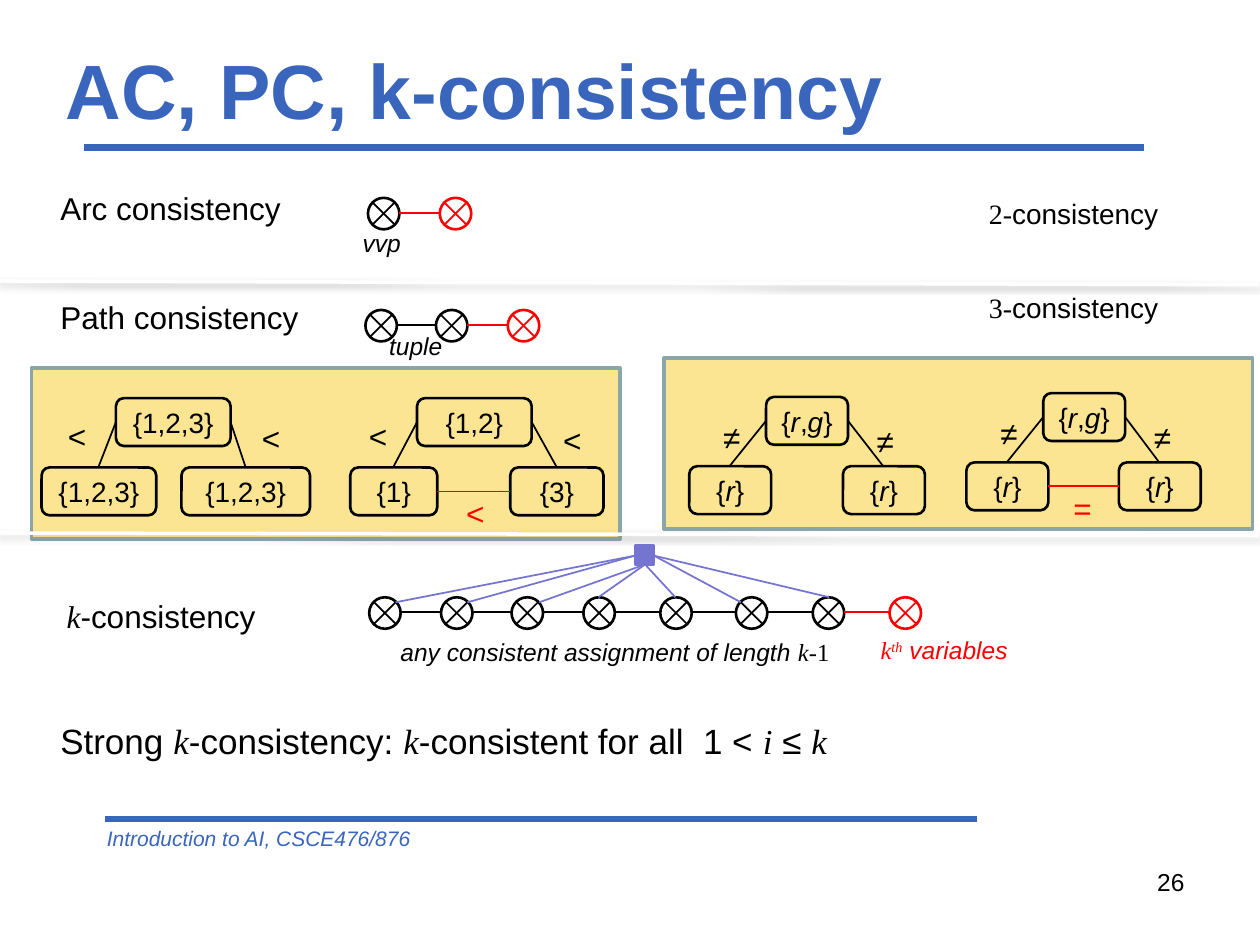
from dataclasses import dataclass
from itertools import pairwise

from lxml.etree import SubElement
from pptx import Presentation
from pptx.dml.color import RGBColor
from pptx.enum.shapes import MSO_CONNECTOR, MSO_SHAPE
from pptx.enum.text import MSO_ANCHOR, MSO_AUTO_SIZE, PP_ALIGN
from pptx.oxml.ns import qn
from pptx.util import Emu, Pt

EMU_PER_PX = 9144  # 100 px to the inch
COLORS = {
    "black": "000000", "red": "FF0000", "blue": "3A65BC", "white": "FFFFFF",
    "violet": "7575D1", "sand": "FCE592", "sage": "8AA6A8", "gray": "808080",
}
SERIF = "Times New Roman"
NODE = 25
BOX_HEIGHT = 38
CHILD_DROP = 55

Point = tuple[int, int]


@dataclass(frozen=True)
class Span:
    text: str
    name: str = "Arial"
    italic: bool = False
    bold: bool = False
    raised: bool = False


@dataclass(frozen=True)
class Label:
    at: Point
    width: int
    height: int
    size: int
    spans: tuple[Span, ...]
    color: str = "black"
    align: PP_ALIGN = PP_ALIGN.LEFT


@dataclass(frozen=True)
class Box:
    left: int
    width: int
    spans: tuple[Span, ...]

    @property
    def right(self) -> int:
        return self.left + self.width

    @property
    def center(self) -> int:
        return self.left + self.width // 2


@dataclass(frozen=True)
class Tree:
    """A variable over two others, with its constraints and an optional inferred one."""
    top: int
    parent: Box
    left: Box
    right: Box
    symbol: str
    symbol_points: tuple[Point, Point]
    inferred: str = ""
    inferred_point: Point = (0, 0)


def px(length: int) -> Emu:
    return Emu(length * EMU_PER_PX)


def rgb(color: str) -> RGBColor:
    return RGBColor.from_string(COLORS[color])


def write(frame, spans: tuple[Span, ...], size: int, color: str, align: PP_ALIGN) -> None:
    frame.word_wrap = True
    frame.auto_size = MSO_AUTO_SIZE.NONE
    para = frame.paragraphs[0]
    para.alignment = align
    for span in spans:
        run = para.add_run()
        run.text = span.text
        formats = {"name": span.name, "size": Pt(size), "italic": span.italic, "bold": span.bold}
        for key, value in formats.items():
            setattr(run.font, key, value)
        run.font.color.rgb = rgb(color)
        if span.raised:
            run._r.get_or_add_rPr().set("baseline", "30000")


def add_label(page, label: Label) -> None:
    box = page.shapes.add_textbox(*map(px, (*label.at, label.width, label.height)))
    write(box.text_frame, label.spans, label.size, label.color, label.align)


def add_symbol(page, text: str, at: Point, color: str = "black") -> None:
    add_label(page, Label(at, 35, 40, 18, (Span(text),), color))


def add_line(page, start: Point, end: Point, color: str = "black", width: float = 1):
    """Draw a straight line and return its empty effect list."""
    line = page.shapes.add_connector(MSO_CONNECTOR.STRAIGHT, *map(px, (*start, *end)))
    line.line.color.rgb = rgb(color)
    line.line.width = Pt(width)
    return SubElement(line._element.spPr, qn("a:effectLst"))


def add_divider(page, start: Point, end: Point) -> None:
    effects = add_line(page, start, end, "white", 2)
    shadow = SubElement(effects, qn("a:outerShdw"), blurRad="40000", dist="20000",
                        dir="5400000", rotWithShape="0")
    tint = SubElement(shadow, qn("a:srgbClr"), val=COLORS["gray"])
    SubElement(tint, qn("a:alpha"), val="38000")


def add_outline(page, kind: MSO_SHAPE, at: Point, width: int, height: int,
                color: str = "black", fill: str = "", line_width: float = 1.5):
    shape = page.shapes.add_shape(kind, *map(px, (*at, width, height)))
    shape.shadow.inherit = False
    if fill:
        shape.fill.solid()
        shape.fill.fore_color.rgb = rgb(fill)
    else:
        shape.fill.background()
    shape.line.color.rgb = rgb(color)
    shape.line.width = Pt(line_width)
    return shape


def add_node(page, left: int, top: int, color: str) -> None:
    """Draw a crossed circle."""
    add_outline(page, MSO_SHAPE.OVAL, (left, top), NODE, NODE, color)
    near, far = 4, NODE - 4
    add_line(page, (left + far, top + near), (left + near, top + far), color)
    add_line(page, (left + near, top + near), (left + far, top + far), color)


def add_chain(page, lefts: list[int], top: int) -> None:
    """Draw linked nodes, the last node and link in red."""
    for left in lefts:
        add_node(page, left, top, "red" if left == lefts[-1] else "black")
    for left, following in pairwise(lefts):
        color = "red" if following == lefts[-1] else "black"
        y = top + NODE // 2
        add_line(page, (left + NODE, y), (following, y), color)


def add_box(page, box: Box, top: int) -> None:
    shape = add_outline(page, MSO_SHAPE.ROUNDED_RECTANGLE, (box.left, top), box.width, BOX_HEIGHT)
    shape.text_frame.vertical_anchor = MSO_ANCHOR.MIDDLE
    write(shape.text_frame, box.spans, 16, "black", PP_ALIGN.CENTER)


def add_tree(page, tree: Tree) -> None:
    child_top = tree.top + CHILD_DROP
    middle = tree.top + BOX_HEIGHT // 2
    add_box(page, tree.parent, tree.top)
    for child in (tree.left, tree.right):
        add_box(page, child, child_top)
    add_line(page, (tree.left.center, child_top), (tree.parent.left, middle))
    add_line(page, (tree.parent.right, middle), (tree.right.center, child_top))
    for point in tree.symbol_points:
        add_symbol(page, tree.symbol, point)
    if tree.inferred:
        y = child_top + BOX_HEIGHT // 2
        add_line(page, (tree.left.right, y), (tree.right.left, y), "red")
        add_symbol(page, tree.inferred, tree.inferred_point, "red")


K = Span("k", SERIF, italic=True)
R = (Span("{"), Span("r", italic=True), Span("}"))
RG = (Span("{"), Span("r", italic=True), Span(","), Span("g", italic=True), Span("}"))
ONE_TO_THREE = (Span("{1,2,3}"),)

TREES = [
    Tree(316, Box(92, 91, ONE_TO_THREE), Box(33, 91, ONE_TO_THREE), Box(144, 102, ONE_TO_THREE),
         "<", ((44, 326), (198, 328))),
    Tree(316, Box(331, 91, (Span("{1,2}"),)), Box(278, 69, (Span("{1}"),)),
         Box(405, 74, (Span("{3}"),)), "<", ((283, 326), (437, 329)), "<", (360, 387)),
    Tree(315, Box(608, 65, RG), Box(547, 65, R), Box(669, 65, R),
         "≠", ((564, 327), (686, 330))),
    Tree(312, Box(828, 65, RG), Box(767, 65, R), Box(888, 65, R),
         "≠", ((784, 324), (906, 327)), "=", (842, 383)),
]
LABELS = [
    Label((75, 650), 525, 30, 12, (Span("Introduction to AI, CSCE476/876", italic=True),), "blue"),
    Label((717, 683), 233, 52, 14, (Span("26"),), align=PP_ALIGN.RIGHT),
    Label((38, 145), 225, 40, 18, (Span("Arc consistency"),)),
    Label((38, 232), 225, 40, 18, (Span("Path consistency"),)),
    Label((43, 469), 225, 40, 18, (K, Span("-consistency"))),
    Label((775, 151), 225, 37, 16, (Span("2-", SERIF), Span("consistency"))),
    Label((775, 226), 225, 37, 16, (Span("3-", SERIF), Span("consistency"))),
    Label((278, 176), 102, 34, 14, (Span("vvp", italic=True),)),
    Label((299, 258), 102, 34, 14, (Span("tuple", italic=True),)),
    Label((308, 501), 379, 34, 14, (Span("any consistent assignment of length ", italic=True),
                                    Span("k-", SERIF, italic=True), Span("1", SERIF))),
    Label((689, 499), 149, 34, 14, (K, Span("th", SERIF, italic=True, raised=True),
                                    Span(" variables", italic=True)), "red"),
    Label((38, 566), 942, 61, 20, (
        Span("Strong "), K, Span("-consistency: "), K, Span("-consistent for all  1 < "),
        Span("i", SERIF, italic=True), Span(" ≤ "), K)),
]
CHAINS = [([292, 349], 157), ([290, 346, 403], 246),
          ([293, 350, 406, 463, 524, 584, 645, 706], 474)]
FAN = [((314, 478), (504, 441)), ((371, 478), (504, 441)), ((428, 478), (512, 448)),
       ((475, 474), (512, 448)), ((536, 474), (512, 448)), ((658, 474), (519, 441)),
       ((588, 478), (519, 441))]


def main() -> None:
    deck = Presentation()
    deck.slide_width, deck.slide_height = px(1000), px(750)
    page = deck.slides.add_slide(deck.slide_layouts[5])

    title = page.shapes.title
    for key, value in {"left": 42, "top": 33, "width": 900, "height": 75}.items():
        setattr(title, key, px(value))
    title.text_frame.vertical_anchor = MSO_ANCHOR.MIDDLE
    write(title.text_frame, (Span("AC, PC, k-consistency", bold=True),), 44, "blue", PP_ALIGN.LEFT)

    add_line(page, (67, 117), (908, 117), "blue", 4)
    add_line(page, (83, 650), (775, 650), "blue", 4)
    for at in ((527, 284), (25, 292)):
        add_outline(page, MSO_SHAPE.RECTANGLE, at, 467, 136, "sage", "sand", 2)
    add_divider(page, (-1, 223), (999, 226))
    add_divider(page, (-1, 423), (999, 425))

    for lefts, top in CHAINS:
        add_chain(page, lefts, top)
    add_outline(page, MSO_SHAPE.RECTANGLE, (504, 433), 15, 15, "violet", "violet")
    for start, end in FAN:
        add_line(page, start, end, "violet")
    for label in LABELS:
        add_label(page, label)
    for tree in TREES:
        add_tree(page, tree)
    deck.save("out.pptx")


if __name__ == "__main__":
    main()
